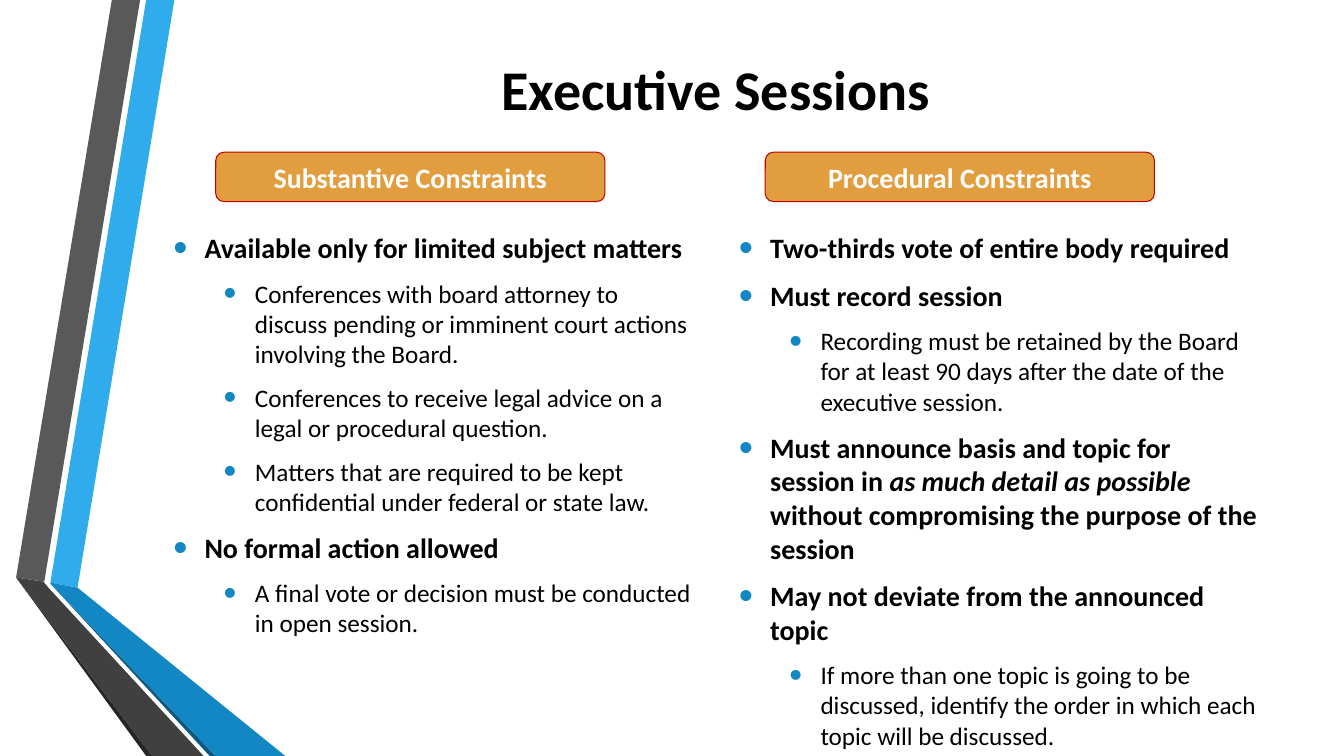
from lxml import etree
from pptx import Presentation
from pptx import util as u
from pptx.dml.color import RGBColor
from pptx.enum import shapes, text
from pptx.oxml import ns

COLORS = {
    "black": "000000", "white": "FFFFFF", "bullet": "1287C3",
    "label": "E29D3E", "label_line": "C00000",
    "sky": "30ACEC", "blue": "1287C3", "navy": "0C5A82",
    "gray": "595959", "charcoal": "404040", "coal": "262626",
}

RIBBONS = [
    ("sky", [(0.5, 5.78), (0.77, 5.83), (1.73, 0), (1.45, 0)]),
    ("gray", [(1.39, 0), (1.11, 0), (0.16, 5.73), (0.44, 5.77)]),
    ("coal", [(0.16, 5.73), (1.45, 7.5), (1.51, 7.5)]),
    ("navy", [(0.5, 5.79), (2.08, 7.5), (2.14, 7.5)]),
    ("blue", [(0.5, 5.78), (0.5, 5.79), (2.14, 7.5), (2.83, 7.5), (0.77, 5.83)]),
    ("charcoal", [(2.02, 7.5), (0.48, 5.83), (0.43, 5.77), (0.16, 5.73), (1.51, 7.5)]),
]

SUBSTANTIVE = [
    (0, ["Available only for limited subject matters"]),
    (1, ["Conferences with board attorney to discuss pending or imminent "
         "court actions involving the Board."]),
    (1, ["Conferences to receive legal advice on a legal or procedural question."]),
    (1, ["Matters that are required to be kept confidential under federal or state law."]),
    (0, ["No formal action allowed"]),
    (1, ["A final vote or decision must be conducted in open session."]),
]

PROCEDURAL = [
    (0, ["Two-thirds vote of entire body required"]),
    (0, ["Must record session"]),
    (1, ["Recording must be retained by the Board for at least 90 days after "
         "the date of the executive session."]),
    (0, ["Must announce basis and topic for session in ",
         "as much detail as possible ",
         "without compromising the purpose of the session"]),
    (0, ["May not deviate from the announced topic"]),
    (1, ["If more than one topic is going to be discussed, identify the order "
         "in which each topic will be discussed."]),
]


def color(name):
    return RGBColor.from_string(COLORS[name])


def add_text(para, words, size=20, bold=True, italic=False, fill="black"):
    span = para.add_run()
    span.text = words
    font = span.font
    font.name = "Calibri"
    font.size = u.Pt(size)
    font.bold = bold
    font.italic = italic
    font.color.rgb = color(fill)


def add_child(parent, tag, **attributes):
    return etree.SubElement(parent, ns.qn(tag), attributes)


def set_bullet(para, level):
    props = para._p.get_or_add_pPr()
    props.set("marL", str(u.Inches(0.31 + 0.5 * level)))
    props.set("indent", str(u.Inches(-0.31)))
    before = add_child(props, "a:spcBef")
    add_child(before, "a:spcPct", val="20000")
    after = add_child(props, "a:spcAft")
    add_child(after, "a:spcPts", val="600")
    tint = add_child(props, "a:buClr")
    add_child(tint, "a:srgbClr", val=COLORS["bullet"])
    add_child(props, "a:buSzPct", val="145000")
    add_child(props, "a:buFont", typeface="Arial")
    add_child(props, "a:buChar", char="•")


def add_ribbon(page, fill, points):
    corners = [(u.Inches(x), u.Inches(y)) for x, y in points]
    builder = page.shapes.build_freeform(*corners[0])
    builder.add_line_segments(corners[1:], close=True)
    ribbon = builder.convert_to_shape()
    ribbon.shadow.inherit = False
    ribbon.fill.solid()
    ribbon.fill.fore_color.rgb = color(fill)
    ribbon.line.fill.background()


def add_title(page, words):
    title = page.shapes.title
    title.left, title.top = u.Inches(1.62), u.Inches(0.45)
    title.width, title.height = u.Inches(10.96), u.Inches(0.84)
    title.text_frame.vertical_anchor = text.MSO_ANCHOR.MIDDLE
    para = title.text_frame.paragraphs[0]
    para.alignment = text.PP_ALIGN.CENTER
    add_text(para, words, size=40)


def add_label(page, left, words):
    label = page.shapes.add_shape(
        shapes.MSO_SHAPE.ROUNDED_RECTANGLE,
        u.Inches(left), u.Inches(1.51), u.Inches(3.86), u.Inches(0.49))
    label.shadow.inherit = False
    label.fill.solid()
    label.fill.fore_color.rgb = color("label")
    label.line.color.rgb = color("label_line")
    label.line.width = u.Pt(0.75)
    label.text_frame.vertical_anchor = text.MSO_ANCHOR.MIDDLE
    para = label.text_frame.paragraphs[0]
    para.alignment = text.PP_ALIGN.CENTER
    para.space_before = u.Pt(6)
    add_text(para, words, fill="white")


def add_bullets(page, left, height, items):
    box = page.shapes.add_textbox(
        u.Inches(left), u.Inches(2.24), u.Inches(5.35), u.Inches(height))
    frame = box.text_frame
    frame.word_wrap = True
    for number, (level, spans) in enumerate(items):
        para = frame.add_paragraph() if number else frame.paragraphs[0]
        para.level = level
        set_bullet(para, level)
        for position, words in enumerate(spans):
            add_text(para, words, size=20 - 2 * level, bold=level == 0,
                     italic=position == 1)


def main():
    deck = Presentation()
    deck.slide_width, deck.slide_height = u.Inches(13.33), u.Inches(7.5)
    page = deck.slides.add_slide(deck.slide_layouts.get_by_name("Title Only"))
    for fill, points in RIBBONS:
        add_ribbon(page, fill, points)
    add_title(page, "Executive Sessions")
    add_bullets(page, 1.62, 5.12, SUBSTANTIVE)
    add_bullets(page, 7.23, 4.99, PROCEDURAL)
    add_label(page, 2.14, "Substantive Constraints")
    add_label(page, 7.59, "Procedural Constraints")
    deck.save("out.pptx")


if __name__ == "__main__":
    main()
